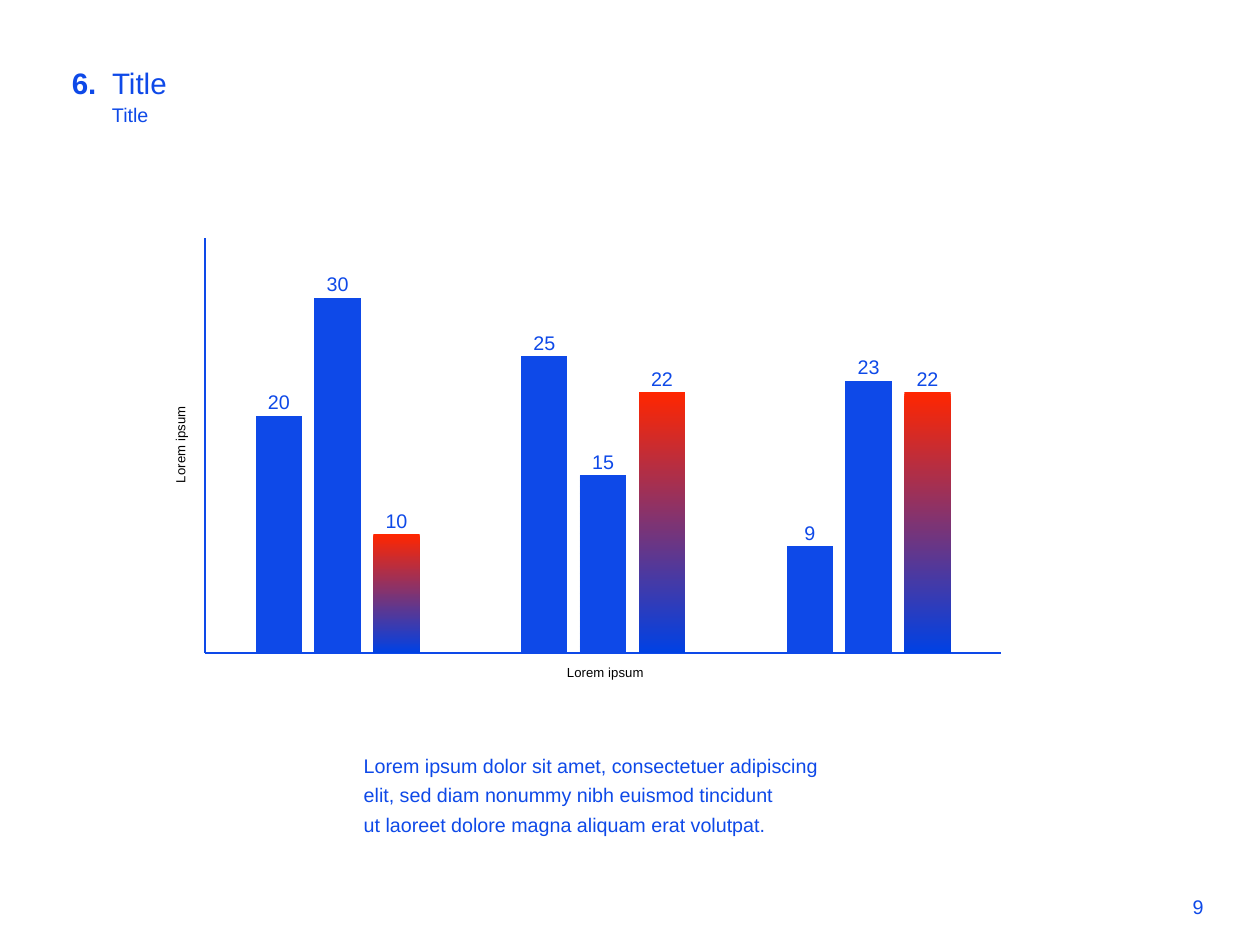
from pptx import Presentation
from pptx.chart.data import CategoryChartData
from pptx.dml.color import RGBColor
from pptx.enum.chart import (XL_CHART_TYPE, XL_LABEL_POSITION, XL_TICK_LABEL_POSITION,
                             XL_TICK_MARK)
from pptx.enum.dml import MSO_PATTERN
from pptx.enum.text import MSO_ANCHOR, MSO_AUTO_SIZE, PP_ALIGN
from pptx.oxml import parse_xml
from pptx.oxml.ns import nsdecls, qn
from pptx.util import Pt

BLUE = RGBColor(0x0E, 0x49, 0xE8)
DEEP_BLUE = RGBColor(0x00, 0x41, 0xE4)
RED = RGBColor(0xFF, 0x26, 0x00)
BLACK = RGBColor(0, 0, 0)
WHITE = RGBColor(0xFF, 0xFF, 0xFF)

CATEGORIES = ["1", "2", "3"]
SERIES = {"Series 1": (20, 25, 9), "Series 2": (30, 15, 23), "Series 3": (10, 22, 22)}


def place(parent, **fractions):
    """Set a manual layout, in fractions of the chart, on a chart part."""
    old = parent.find(qn("c:layout"))
    if old is not None:
        parent.remove(old)
    target = '<c:layoutTarget val="inner"/>' if "w" in fractions else ""
    modes = "".join(f'<c:{axis}Mode val="edge"/>' for axis in "xy")
    values = "".join(f'<c:{key} val="{value}"/>' for key, value in fractions.items())
    layout = parse_xml(f'<c:layout {nsdecls("c")}><c:manualLayout>{target}{modes}{values}'
                       '</c:manualLayout></c:layout>')
    parent.insert(0 if parent.find(qn("c:tx")) is None else 1, layout)


class Page:
    font_name = "Arial"
    color = BLUE

    def __init__(self, slide):
        self.slide = slide

    def style(self, font, size, color=None, bold=False):
        font.name, font.size, font.bold = self.font_name, Pt(size), bold
        font.color.rgb = color or self.color

    def fill_text(self, shape, text, size, leading=None, align=PP_ALIGN.LEFT,
                  anchor=MSO_ANCHOR.TOP, bold=False):
        frame = shape.text_frame
        frame.word_wrap = True
        frame.auto_size = MSO_AUTO_SIZE.NONE
        frame.vertical_anchor = anchor
        paragraph = frame.paragraphs[0]
        paragraph.text = text
        paragraph.alignment = align
        if leading:
            paragraph.line_spacing = Pt(leading)
        self.style(paragraph.font, size, bold=bold)

    def title(self, text, left, top, width, height, **options):
        title = self.slide.shapes.title
        title.left, title.top, title.width, title.height = map(Pt, (left, top, width, height))
        self.fill_text(title, text, **options)

    def text(self, text, left, top, width, height, **options):
        box = self.slide.shapes.add_textbox(*map(Pt, (left, top, width, height)))
        self.fill_text(box, text, **options)

    def axis(self, axis, title, x, y, rotation=0):
        axis.has_major_gridlines = False
        axis.major_tick_mark = axis.minor_tick_mark = XL_TICK_MARK.NONE
        axis.tick_label_position = XL_TICK_LABEL_POSITION.NONE
        axis.format.line.color.rgb = self.color
        axis.format.line.width = Pt(2.25)
        axis_title = axis.axis_title
        paragraph = axis_title.text_frame.paragraphs[0]
        paragraph.text = title
        self.style(paragraph.font, 20, BLACK)
        axis_title.element.find(".//" + qn("a:bodyPr")).set("rot", str(rotation * 60000))
        place(axis_title.element, x=x, y=y)

    def column_chart(self, left, top, width, height):
        data = CategoryChartData()
        data.categories = CATEGORIES
        for name, values in SERIES.items():
            data.add_series(name, values)
        chart = self.slide.shapes.add_chart(
            XL_CHART_TYPE.COLUMN_CLUSTERED, *map(Pt, (left, top, width, height)), data).chart
        chart.has_title = chart.has_legend = False
        self.style(chart.font, 10, BLACK)
        place(chart.element.find(".//" + qn("c:plotArea")), x=0.051, y=0.02, w=0.928, h=0.9)

        # Axes
        chart.value_axis.minimum_scale, chart.value_axis.maximum_scale = 0, 35
        self.axis(chart.category_axis, "Lorem ipsum", x=0.47, y=0.94)
        self.axis(chart.value_axis, "Lorem ipsum", x=0.01, y=0.38, rotation=-90)

        # Columns and their values
        plot = chart.plots[0]
        plot.vary_by_categories = False
        plot.gap_width, plot.overlap = 219, -27
        for series in plot.series:
            series.invert_if_negative = False
            labels = series.data_labels
            labels.show_value = True
            labels.position = XL_LABEL_POSITION.OUTSIDE_END
            self.style(labels.font, 30)
        solid, striped, faded = (series.format.fill for series in plot.series)
        solid.solid()
        solid.fore_color.rgb = self.color
        striped.patterned()
        striped.pattern = MSO_PATTERN.DARK_HORIZONTAL
        striped.fore_color.rgb, striped.back_color.rgb = self.color, WHITE
        faded.gradient()
        faded.gradient_angle = 270
        for stop, color in zip(faded.gradient_stops, (RED, DEEP_BLUE)):
            stop.color.rgb = color


def main():
    deck = Presentation()
    deck.slide_width, deck.slide_height = Pt(1919.52), Pt(1440)
    page = Page(deck.slides.add_slide(deck.slide_layouts[5]))

    # Heading
    page.title("Title", 163.5, 80, 1411, 70.5, size=45, leading=70)
    page.text("6.", 38, 80, 116, 70.5, size=45, leading=70, align=PP_ALIGN.RIGHT, bold=True)
    page.text("Title", 163.5, 144.5, 1411, 52.5, size=30, leading=45)

    # Chart and commentary
    page.column_chart(245.5, 348.5, 1307.5, 702.5)
    page.text("Lorem ipsum dolor sit amet, consectetuer adipiscing elit, "
              "sed diam nonummy nibh euismod tincidunt\n"
              "ut laoreet dolore magna aliquam erat volutpat.",
              547, 1136, 740, 139, size=30, leading=45)

    # Page number
    page.text("9", 1713, 1359.5, 127.5, 44, size=30, align=PP_ALIGN.RIGHT,
              anchor=MSO_ANCHOR.MIDDLE)

    deck.save("out.pptx")


if __name__ == "__main__":
    main()
